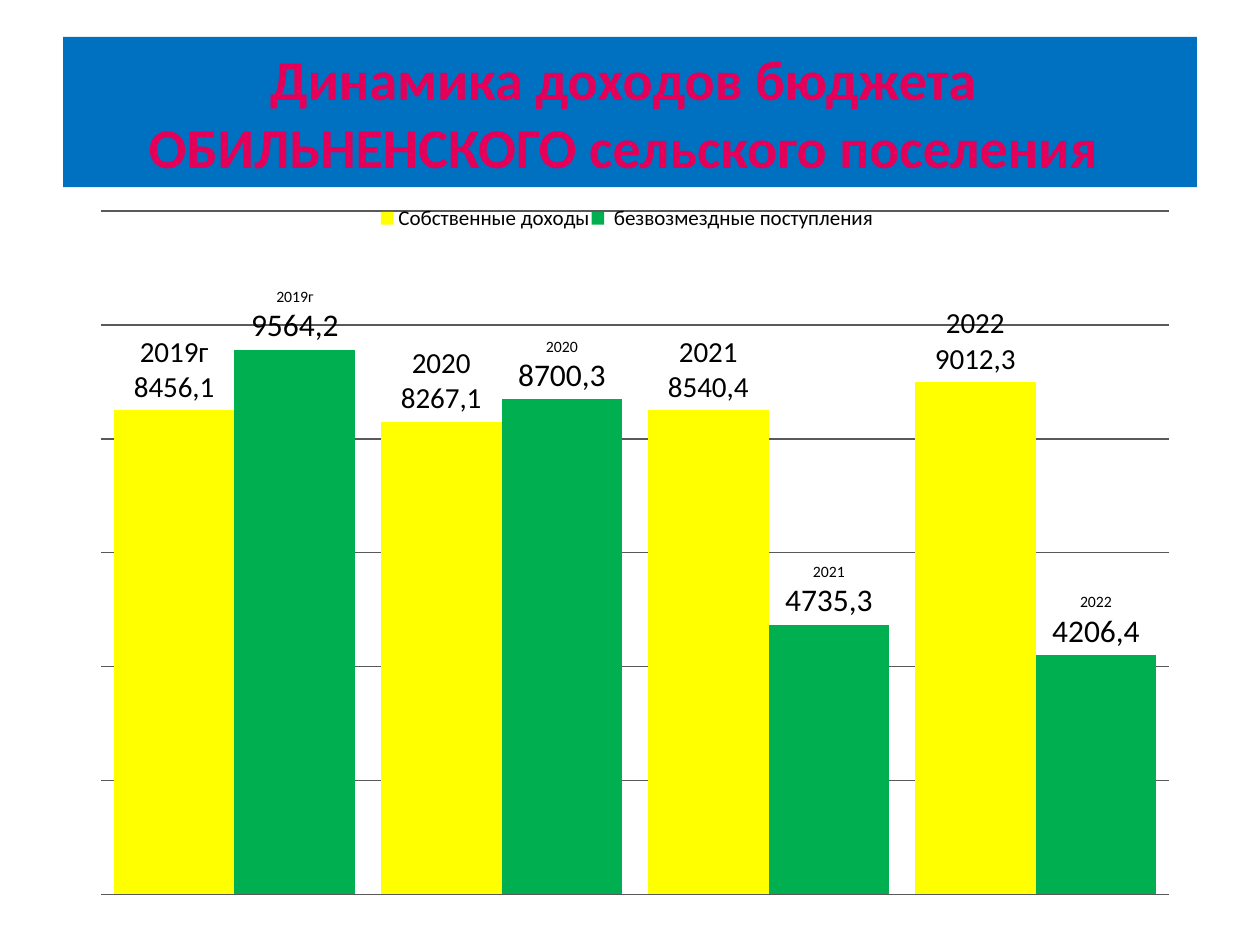
from dataclasses import dataclass
from typing import Any

from lxml.etree import SubElement
from pptx import Presentation
from pptx.chart.data import CategoryChartData as ChartData
from pptx.dml.color import RGBColor
from pptx.enum.chart import XL_CHART_TYPE as ChartKind
from pptx.enum.chart import XL_LABEL_POSITION as LabelPlace
from pptx.enum.chart import XL_LEGEND_POSITION as LegendPlace
from pptx.enum.text import MSO_ANCHOR as Anchor
from pptx.enum.text import MSO_AUTO_SIZE as AutoSize
from pptx.enum.text import PP_ALIGN as Align
from pptx.oxml.ns import qn
from pptx.util import Pt

BLUE = RGBColor(0x00, 0x70, 0xC0)
CRIMSON = RGBColor(0xE4, 0x00, 0x59)
YELLOW = RGBColor(0xFF, 0xFF, 0x00)
GREEN = RGBColor(0x00, 0xB0, 0x50)
GREY = RGBColor(0x59, 0x59, 0x59)
BLACK = RGBColor(0x00, 0x00, 0x00)


@dataclass
class Income:
    """One kind of income with its column values and label texts."""

    name: str
    color: RGBColor
    values: list
    labels: list
    year_size: float
    value_size: float


YEARS = ["2019г", "2020", "2021", "2022"]
INCOMES = [
    Income("Собственные доходы", YELLOW, [8500, 8300, 8500, 9000],
           ["8456,1", "8267,1", "8540,4", "9012,3"], 16.6, 16.6),
    Income(" безвозмездные поступления ", GREEN, [9564.2, 8700.3, 4735.3, 4206.4],
           ["9564,2", "8700,3", "4735,3", "4206,4"], 9, 18),
]


@dataclass
class SlideBuilder:
    """Draws the elements of one slide in a shared style."""

    page: Any
    font: str = "Calibri"

    def style(self, font, size, color, bold=False):
        font.name, font.size, font.bold = self.font, Pt(size), bold
        font.color.rgb = color

    def span(self, para, text, size, color, bold=False):
        span = para.add_run()
        span.text = text
        self.style(span.font, size, color, bold)

    def title(self, lines, left, top, width, height):
        box = self.page.shapes.title
        box.left, box.top, box.width, box.height = map(Pt, (left, top, width, height))
        box.fill.solid()
        box.fill.fore_color.rgb = BLUE
        frame = box.text_frame
        frame.word_wrap, frame.auto_size = True, AutoSize.NONE
        frame.vertical_anchor = Anchor.MIDDLE
        para = frame.paragraphs[0]
        para.alignment = Align.CENTER
        for index, line in enumerate(lines):
            if index:
                para.add_line_break()
            self.span(para, line, 32, CRIMSON, True)

    def label(self, point, year, value, year_size, value_size):
        frame = point.data_label.text_frame
        self.span(frame.paragraphs[0], year, year_size, BLACK)
        self.span(frame.add_paragraph(), value, value_size, BLACK)
        point.data_label.position = LabelPlace.OUTSIDE_END

    def place(self, element, index, **settings):
        for old in element.findall(qn("c:layout")):
            element.remove(old)
        layout = SubElement(element, qn("c:layout"))
        element.insert(index, layout)
        manual = SubElement(layout, qn("c:manualLayout"))
        for name, value in settings.items():
            SubElement(manual, qn(f"c:{name}")).set("val", str(value))

    def legend(self, chart):
        chart.has_legend = True
        legend = chart.legend
        legend.position = LegendPlace.TOP
        legend.include_in_layout = False
        self.style(legend.font, 12, BLACK)
        element = legend._element
        overlay = element.find(qn("c:overlay"))
        overlay.set("val", "1")
        self.place(element, element.index(overlay), xMode="edge", yMode="edge",
                   x=0.27, y=0.01, w=0.45, h=0.04)

    def columns(self, left, top, width, height):
        data = ChartData(number_format="General")
        data.categories = [str(number) for number in range(1, len(YEARS) + 1)]
        for income in INCOMES:
            data.add_series(income.name, income.values)
        lengths = map(Pt, (left, top, width, height))
        chart = self.page.shapes.add_chart(ChartKind.COLUMN_CLUSTERED, *lengths, data).chart
        self.style(chart.font, 18, BLACK)
        chart.has_title = False
        self.legend(chart)
        chart.category_axis.visible = False
        axis = chart.value_axis
        axis.visible = False
        axis.minimum_scale, axis.maximum_scale, axis.major_unit = 0, 12000, 2000
        axis.has_major_gridlines = True
        axis.major_gridlines.format.line.color.rgb = GREY
        axis.major_gridlines.format.line.width = Pt(0.75)
        plot = chart.plots[0]
        plot.gap_width, plot.overlap, plot.vary_by_categories = 21, 0, False
        for series, income in zip(plot.series, INCOMES):
            series.format.fill.solid()
            series.format.fill.fore_color.rgb = income.color
            series.data_labels.show_value = True
            for index, (year, value) in enumerate(zip(YEARS, income.labels)):
                self.label(series.points[index], year, value, income.year_size, income.value_size)
        self.place(plot._element.getparent(), 0, layoutTarget="inner", xMode="edge",
                   yMode="edge", x=0.02, y=0.02, w=0.96, h=0.96)


def main():
    deck = Presentation()
    deck.slide_width, deck.slide_height = Pt(720), Pt(540)
    builder = SlideBuilder(deck.slides.add_slide(deck.slide_layouts[5]))
    lines = ["Динамика доходов бюджета ", "ОБИЛЬНЕНСКОГО сельского поселения "]
    builder.title(lines, 36, 21, 648, 86)
    builder.columns(45, 112.5, 635.8, 406.8)
    deck.save("out.pptx")


if __name__ == "__main__":
    main()
